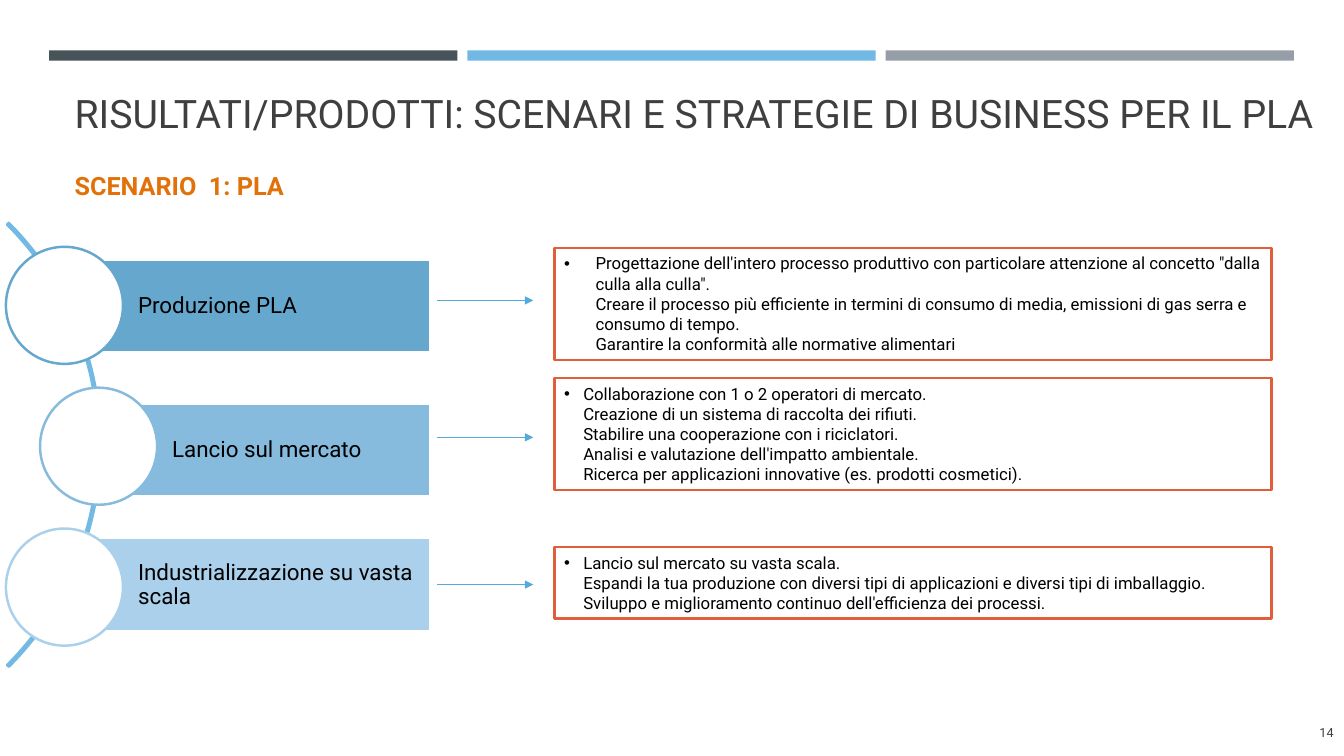
from copy import deepcopy
from dataclasses import dataclass

from lxml.etree import SubElement
from pptx import Presentation
from pptx.dml.color import RGBColor
from pptx.enum.shapes import MSO_CONNECTOR, MSO_SHAPE
from pptx.enum.text import MSO_ANCHOR, MSO_AUTO_SIZE, PP_ALIGN
from pptx.oxml.ns import qn
from pptx.util import Cm, Pt

HUES = {
    "dark": "465359", "sky": "71B9E4", "grey": "969FA7", "ink": "3F3F3F",
    "orange": "E3710A", "arc": "72B9E3", "arrow": "54AADE", "red": "E25D3C",
    "white": "FFFFFF", "black": "000000",
    "deep": "66A7CE", "mid": "87BBDD", "pale": "ABD0EB",
}
FONT = "Roboto"
EDGE = 10.85


@dataclass
class Step:
    """A stage of the plan with its label, arrow and detail box."""
    label: str
    hue: str
    left: float
    top: float
    line: float
    box: float
    tall: float
    dent: float
    note: str


STEPS = [
    Step("Produzione PLA", "deep", 1.63, 6.53, 7.57, 6.25, 2.82, 0.79,
         "Progettazione dell'intero processo produttivo con particolare "
         "attenzione al concetto \"dalla culla alla culla\".\n"
         "Creare il processo più efficiente in termini di consumo di media, "
         "emissioni di gas serra e consumo di tempo.\n"
         "Garantire la conformità alle normative alimentari"),
    Step("Lancio sul mercato", "mid", 2.49, 10.16, 11.02, 9.53, 2.82, 0.48,
         "Collaborazione con 1 o 2 operatori di mercato.\n"
         "Creazione di un sistema di raccolta dei rifiuti.\n"
         "Stabilire una cooperazione con i riciclatori.\n"
         "Analisi e valutazione dell'impatto ambientale.\n"
         "Ricerca per applicazioni innovative (es. prodotti cosmetici)."),
    Step("Industrializzazione su vasta scala", "pale", 1.63, 13.56, 14.73,
         13.79, 1.8, 0.48,
         "Lancio sul mercato su vasta scala.\n"
         "Espandi la tua produzione con diversi tipi di applicazioni e "
         "diversi tipi di imballaggio.\n"
         "Sviluppo e miglioramento continuo dell'efficienza dei processi."),
]


def tint(name: str) -> RGBColor:
    """Return the named colour."""
    return RGBColor.from_string(HUES[name])


def write(shape, text: str, size: float, hue: str = "black", bold: bool = False,
          align=PP_ALIGN.LEFT, anchor=MSO_ANCHOR.TOP, space: float = 1,
          pad: tuple = (0.25, 0.13, 0.25, 0.13), dent: float = 0) -> None:
    """Put formatted text in a shape, with a bullet if it is indented."""
    frame = shape.text_frame
    frame.word_wrap = True
    frame.auto_size = MSO_AUTO_SIZE.NONE
    frame.vertical_anchor = anchor
    (frame.margin_left, frame.margin_top,
     frame.margin_right, frame.margin_bottom) = map(Cm, pad)
    para = frame.paragraphs[0]
    para.alignment = align
    para.line_spacing = space
    for row, part in enumerate(text.split("\n")):
        if row:
            para.add_line_break()
        run = para.add_run()
        run.text = part
        font = run.font
        font.name, font.size, font.bold = FONT, Pt(size), bold
        font.color.rgb = tint(hue)
    props = run._r.get_or_add_rPr()
    for stop in para._p.findall(qn("a:br")):
        stop.append(deepcopy(props))
    if dent:
        ppr = para._p.get_or_add_pPr()
        ppr.set("marL", str(Cm(dent)))
        ppr.set("indent", str(-Cm(dent)))
        SubElement(ppr, qn("a:buFont")).set("typeface", "Arial")
        SubElement(ppr, qn("a:buChar")).set("char", "•")


def draw(slide, kind, spot: tuple, fill: str = "", line: str = "",
         width: float = 1.75):
    """Add a preset shape at a spot given in centimetres."""
    shape = slide.shapes.add_shape(kind, *map(Cm, spot))
    shape.shadow.inherit = False
    if fill:
        shape.fill.solid()
        shape.fill.fore_color.rgb = tint(fill)
    else:
        shape.fill.background()
    if line:
        shape.line.color.rgb = tint(line)
        shape.line.width = Pt(width)
    else:
        shape.line.fill.background()
    return shape


def point(slide, left: float, right: float, top: float) -> None:
    """Add a level arrow that points right."""
    arrow = slide.shapes.add_connector(
        MSO_CONNECTOR.STRAIGHT, Cm(left), Cm(top), Cm(right), Cm(top))
    arrow.line.color.rgb = tint("arrow")
    arrow.line.width = Pt(1)
    SubElement(arrow.line._get_or_add_ln(), qn("a:tailEnd")).set("type", "triangle")
    SubElement(arrow._element.spPr, qn("a:effectLst"))


def stage(slide, step: Step, row: int) -> None:
    """Draw one stage from its circle to its detail box."""
    bar = draw(slide, MSO_SHAPE.RECTANGLE,
               (step.left, step.top, EDGE - step.left, 2.36),
               step.hue, "white", 2)
    write(bar, step.label, 16, anchor=MSO_ANCHOR.MIDDLE, space=0.9,
          pad=(1.85, 0.1, 0.1, 0.1))
    draw(slide, MSO_SHAPE.OVAL,
         (step.left - 1.48, 6.22 + 3.55 * row, 2.95, 2.95), "white", step.hue)
    point(slide, 11.02, 13.44, step.line)
    box = draw(slide, MSO_SHAPE.RECTANGLE,
               (13.97, step.box, 18.08, step.tall), "white", "red")
    write(box, step.note, 12, dent=step.dent)


def main() -> None:
    """Build and save the slide."""
    deck = Presentation()
    deck.slide_width, deck.slide_height = Cm(33.87), Cm(19.05)
    slide = deck.slides.add_slide(deck.slide_layouts[5])
    for col, hue in enumerate(("dark", "sky", "grey")):
        draw(slide, MSO_SHAPE.RECTANGLE, (1.24 + 10.54 * col, 1.27, 10.29, 0.26), hue)

    title = slide.shapes.title
    title.left, title.top, title.width, title.height = map(
        Cm, (1.63, 1.96, 31.78, 1.6))
    write(title, "RISULTATI/PRODOTTI: SCENARI E STRATEGIE DI BUSINESS PER IL PLA",
          28, "ink", anchor=MSO_ANCHOR.BOTTOM)
    head = slide.shapes.add_textbox(*map(Cm, (1.63, 4.11, 30.63, 1.2)))
    write(head, "SCENARIO  1: PLA", 18, "orange", bold=True, space=1.07)
    page = slide.shapes.add_textbox(*map(Cm, (30.94, 17.96, 2.92, 1.02)))
    write(page, "14", 9, "ink", align=PP_ALIGN.RIGHT, anchor=MSO_ANCHOR.MIDDLE)

    arc = draw(slide, MSO_SHAPE.BLOCK_ARC, (-13.28, 3.3, 15.82, 15.82), line="arc")
    for slot, value in enumerate((189, 27, 0.004)):
        arc.adjustments[slot] = value
    for row, step in enumerate(STEPS):
        stage(slide, step, row)
    deck.save("out.pptx")


if __name__ == "__main__":
    main()
